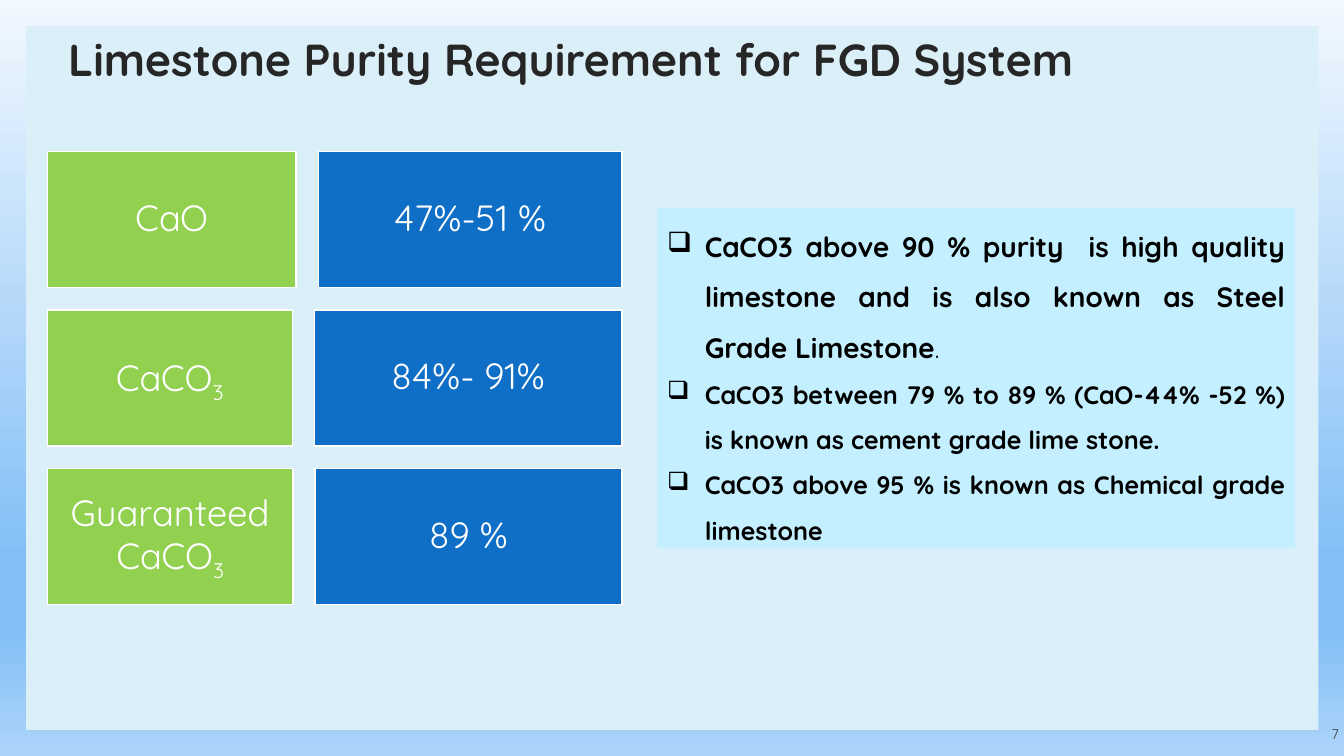
from dataclasses import dataclass

from lxml import etree
from pptx import Presentation
from pptx import util as u
from pptx.dml.color import RGBColor
from pptx.enum import shapes, text
from pptx.oxml.ns import qn

Pt = u.Pt
FONT = "Quicksand"
COLORS = {
    "panel": "DBEFF9", "label": "92D050", "value": "0F6FC6", "notes": "C4EFFF",
    "white": "FFFFFF", "black": "000000", "title": "262626", "number": "404040",
}
BACKGROUND = [(0, "F1F8FE"), (74, "83BFF6"), (83, "83BFF6"), (100, "ACD4F9")]


@dataclass
class Run:
    text: str
    size: float
    color: str = "white"
    bold: bool = False
    sub: bool = False


@dataclass
class Box:
    left: float
    top: float
    width: float
    height: float
    fill: str = ""
    line: str = ""


@dataclass
class Row:
    label: list[Run]
    value: str
    label_width: float


def rgb(name: str) -> RGBColor:
    return RGBColor.from_string(COLORS[name])


def add_box(slide, box: Box):
    """Draw a filled rectangle, or a text box when there is no fill."""
    place = [Pt(v) for v in (box.left, box.top, box.width, box.height)]
    if not box.fill:
        return slide.shapes.add_textbox(*place)
    sp = slide.shapes.add_shape(shapes.MSO_SHAPE.RECTANGLE, *place)
    sp.shadow.inherit = False
    sp.fill.solid()
    sp.fill.fore_color.rgb = rgb(box.fill)
    if box.line:
        sp.line.color.rgb = rgb(box.line)
        sp.line.width = Pt(1)
    else:
        sp.line.fill.background()
    return sp


def set_text(sp, paragraphs: list[list[Run]], frame: dict, para: dict, bullet: str = "") -> None:
    tf = sp.text_frame
    for name, value in {"word_wrap": True, **frame}.items():
        setattr(tf, name, value)
    for i, runs in enumerate(paragraphs):
        p = tf.paragraphs[0] if i == 0 else tf.add_paragraph()
        for name, value in para.items():
            setattr(p, name, value)
        if bullet:
            pPr = p._p.get_or_add_pPr()
            pPr.set("marL", str(Pt(27)))
            pPr.set("indent", str(Pt(-27)))
            etree.SubElement(pPr, qn("a:buChar")).set("char", bullet)
        for run in runs:
            r = p.add_run()
            r.text = run.text
            style = {"name": FONT, "size": Pt(run.size), "bold": run.bold}
            for name, value in style.items():
                setattr(r.font, name, value)
            r.font.color.rgb = rgb(run.color)
            if run.sub:
                r._r.get_or_add_rPr().set("baseline", "-25000")


def set_background(slide) -> None:
    fill = slide.background.fill
    fill.gradient()
    fill.gradient_angle = 270
    stops = slide.element.find(".//" + qn("a:gsLst"))
    for stop in list(stops):
        stops.remove(stop)
    for percent, color in BACKGROUND:
        stop = etree.SubElement(stops, qn("a:gs"), pos=str(percent * 1000))
        etree.SubElement(stop, qn("a:srgbClr"), val=color)


def margins(left: float, top: float, right: float, bottom: float) -> dict:
    return {"margin_left": Pt(left), "margin_top": Pt(top),
            "margin_right": Pt(right), "margin_bottom": Pt(bottom)}


MIDDLE = text.MSO_ANCHOR.MIDDLE
CENTER = {"alignment": text.PP_ALIGN.CENTER, "line_spacing": 0.9}

# Purity grid: both columns share outer edges, label widths vary
GRID_LEFT, GRID_TOP, GRID_RIGHT = 33.8, 108, 444.4
ROW_HEIGHT, ROW_PITCH, COLUMN_GAP = 97.2, 113.4, 15.8
CELL_SIZE = 26
SUB_3 = Run("3", CELL_SIZE, sub=True)
ROWS = [
    Row([Run("CaO", CELL_SIZE)], "47%-51 %", 177.8),
    Row([Run("CaCO", CELL_SIZE), SUB_3], "84%- 91%", 175),
    Row([Run("Guaranteed CaCO", CELL_SIZE), SUB_3], "89 %", 175.5),
]

NOTES = [
    [Run("CaCO3 above 90 % purity  is high quality limestone and is also known as "
         "Steel Grade Limestone", 20, "black", True), Run(".", 18, "black")],
    [Run("CaCO3 between 79 % to 89 % (CaO-44% -52 %) is known as cement grade "
         "lime stone.", 18, "black", True)],
    [Run("CaCO3 above 95 % is known as Chemical grade limestone", 18, "black", True)],
]


def add_grid(slide) -> None:
    for i, row in enumerate(ROWS):
        top = GRID_TOP + i * ROW_PITCH
        value_left = GRID_LEFT + row.label_width + COLUMN_GAP
        cells = [
            (GRID_LEFT, row.label_width, "label", row.label),
            (value_left, GRID_RIGHT - value_left, "value", [Run(row.value, CELL_SIZE)]),
        ]
        for left, width, fill, runs in cells:
            sp = add_box(slide, Box(left, top, width, ROW_HEIGHT, fill, "white"))
            set_text(sp, [runs], {"vertical_anchor": MIDDLE, **margins(8, 8, 8, 8)}, CENTER)


def main() -> None:
    prs = Presentation()
    prs.slide_width, prs.slide_height = Pt(960), Pt(540)
    slide = prs.slides.add_slide(prs.slide_layouts[6])

    # Backdrop
    set_background(slide)
    add_box(slide, Box(18.7, 18.7, 923, 502.6, "panel"))

    # Title
    title = add_box(slide, Box(21.6, 16.6, 758.2, 54.7))
    set_text(title, [[Run("Limestone Purity Requirement for FGD System", 32, "title", True)]],
             {"vertical_anchor": MIDDLE, **margins(14.4, 0, 0, 0)}, CENTER)

    # Purity values
    add_grid(slide)

    # Grade notes
    notes = add_box(slide, Box(469.4, 148.3, 455.8, 243.4, "notes"))
    set_text(notes, NOTES, {"vertical_anchor": text.MSO_ANCHOR.TOP},
             {"alignment": text.PP_ALIGN.JUSTIFY, "line_spacing": 1.5}, "❑")

    # Slide number
    number = add_box(slide, Box(925.2, 504.7, 38.2, 28.8))
    set_text(number, [[Run("7", 10, "number")]],
             {"vertical_anchor": text.MSO_ANCHOR.BOTTOM}, {"alignment": text.PP_ALIGN.RIGHT})

    prs.save("out.pptx")


if __name__ == "__main__":
    main()
